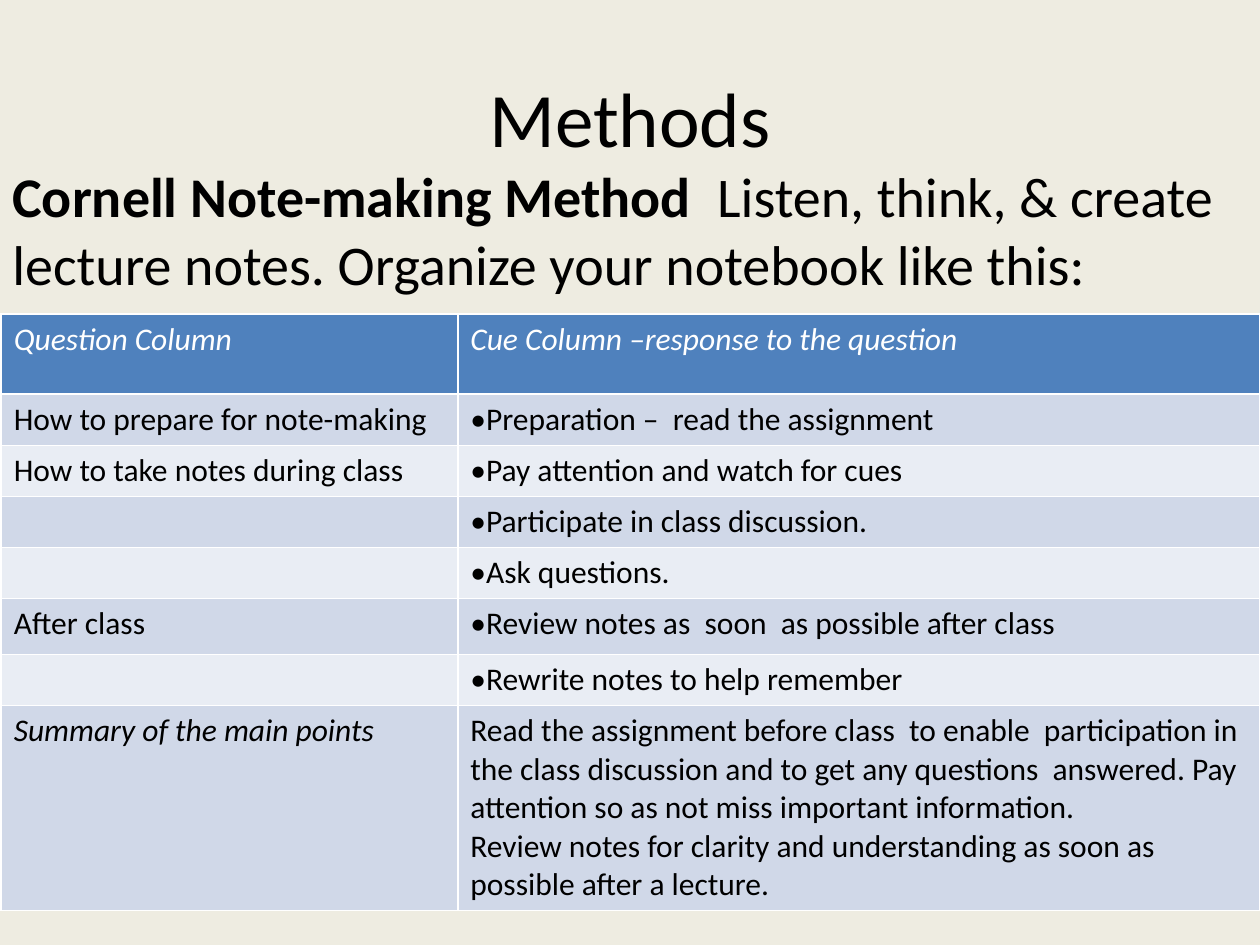
from dataclasses import dataclass

from pptx import Presentation
from pptx.dml.color import RGBColor
from pptx.enum.text import MSO_ANCHOR, PP_ALIGN
from pptx.util import Pt

FONT = "Calibri"
BLACK, WHITE, CREAM = "000000", "FFFFFF", "EEECE1"
HEADER_BLUE = "4F81BD"
BANDS = ("D0D8E8", "E9EDF4")


@dataclass
class NoteRow:
    question: str
    cue: str
    height: float = 29.2
    italic_question: bool = False
    italic_cue: bool = False


NOTE_ROWS = [
    NoteRow("Question Column", "Cue Column –response to the question", 46, True, True),
    NoteRow("How to prepare for note-making", "•Preparation –  read the assignment"),
    NoteRow("How to take notes during class", "•Pay attention and watch for cues"),
    NoteRow("", "•Participate in class discussion."),
    NoteRow("", "•Ask questions."),
    NoteRow("After class", "•Review notes as  soon  as possible after class", 32),
    NoteRow("", "•Rewrite notes to help remember"),
    NoteRow(
        "Summary of the main points",
        "Read the assignment before class  to enable  participation in the class "
        "discussion and to get any questions  answered. Pay attention so as not miss "
        "important information.\nReview notes for clarity and understanding as soon "
        "as possible after a lecture.",
        117,
        True,
    ),
]


def color(value: str) -> RGBColor:
    return RGBColor.from_string(value)


def format_font(font, size: float, value: str, bold=False, italic=False) -> None:
    font.name = FONT
    font.size = Pt(size)
    font.bold = bold
    font.italic = italic
    font.color.rgb = color(value)


def place(shape, left: float, top: float, width: float, height: float) -> None:
    shape.left, shape.top = Pt(left), Pt(top)
    shape.width, shape.height = Pt(width), Pt(height)


def add_title(page) -> None:
    title = page.shapes.title
    place(title, 36, 21.6, 648, 90)
    title.text_frame.text = "Methods"
    title.text_frame.vertical_anchor = MSO_ANCHOR.MIDDLE
    para = title.text_frame.paragraphs[0]
    para.alignment = PP_ALIGN.CENTER
    format_font(para.runs[0].font, 44, BLACK)


def add_introduction(page) -> None:
    box = page.shapes.add_textbox(Pt(0), Pt(89), Pt(720), Pt(86))
    box.text_frame.word_wrap = True
    para = box.text_frame.paragraphs[0]
    for text, bold in (
        ("Cornell Note-making Method  ", True),
        ("Listen, think, & create lecture notes. Organize your notebook like this:", False),
    ):
        span = para.add_run()
        span.text = text
        format_font(span.font, 32, BLACK, bold)


def fill_cell(cell, text: str, fill: str, value: str, italic: bool) -> None:
    cell.fill.solid()
    cell.fill.fore_color.rgb = color(fill)
    cell.text_frame.text = text
    for para in cell.text_frame.paragraphs:
        format_font(para.font, 18, value, italic=italic)
        for span in para.runs:
            format_font(span.font, 18, value, italic=italic)


def add_notes_table(page) -> None:
    height = sum(row.height for row in NOTE_ROWS)
    frame = page.shapes.add_table(
        len(NOTE_ROWS), 2, Pt(0.7), Pt(179.3), Pt(719.3), Pt(height)
    )
    table = frame.table
    for column, width in zip(table.columns, (260.9, 458.4)):
        column.width = Pt(width)
    for index, row in enumerate(NOTE_ROWS):
        table.rows[index].height = Pt(row.height)
        fill = BANDS[(index - 1) % 2] if index else HEADER_BLUE
        value = BLACK if index else WHITE
        fill_cell(table.cell(index, 0), row.question, fill, value, row.italic_question)
        fill_cell(table.cell(index, 1), row.cue, fill, value, row.italic_cue)


def main() -> None:
    deck = Presentation()
    deck.slide_width, deck.slide_height = Pt(720), Pt(540)
    page = deck.slides.add_slide(deck.slide_layouts[5])
    page.background.fill.solid()
    page.background.fill.fore_color.rgb = color(CREAM)
    add_title(page)
    add_introduction(page)
    add_notes_table(page)
    deck.save("out.pptx")


if __name__ == "__main__":
    main()
